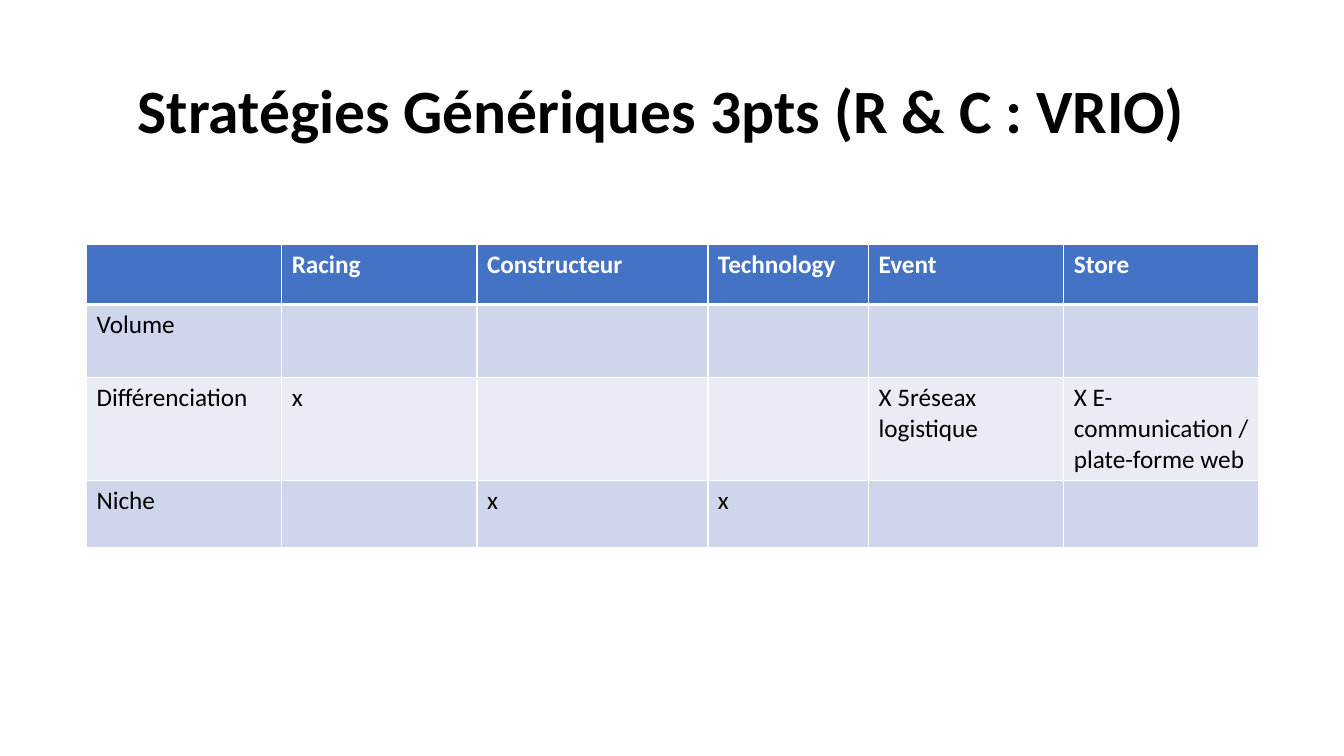
import pptx
import pptx.util
import pptx.dml.color
import pptx.enum.text
import pptx.oxml
import pptx.oxml.ns

COLORS = {
    "text": "000000",
    "header_text": "FFFFFF",
    "border": "FFFFFF",
    "header": "4472C4",
    "band_dark": "CFD5EA",
    "band_light": "E9EBF5",
}
TITLE = "Stratégies Génériques 3pts (R & C : VRIO)"
STRATEGIES = [
    ["", "Racing", "Constructeur", "Technology", "Event", "Store"],
    ["Volume", "", "", "", "", ""],
    ["Différenciation", "x", "", "", "X 5réseax logistique",
     "X E-communication / plate-forme web"],
    ["Niche", "", "x", "x", "", ""],
]
COLUMN_WIDTHS = [4.92, 4.92, 5.82, 4.05, 4.92, 4.92]
ROW_HEIGHTS = [1.52, 1.85, 1.7, 1.7]


def color(name):
    return pptx.dml.color.RGBColor.from_string(COLORS[name])


class SlideBuilder:
    font = "Calibri"

    def __init__(self, page):
        self.page = page

    def add_span(self, para, text, size, color_name, bold):
        span = para.add_run()
        span.text = text
        span.font.name = self.font
        span.font.size = pptx.util.Pt(size)
        span.font.bold = bold
        span.font.color.rgb = color(color_name)

    def add_title(self, text, left, top, width, height):
        box = self.page.shapes.title
        box.left, box.top = pptx.util.Cm(left), pptx.util.Cm(top)
        box.width, box.height = pptx.util.Cm(width), pptx.util.Cm(height)
        box.text_frame.vertical_anchor = pptx.enum.text.MSO_ANCHOR.MIDDLE
        para = box.text_frame.paragraphs[0]
        para.alignment = pptx.enum.text.PP_ALIGN.CENTER
        self.add_span(para, text, 44, "text", True)

    def add_border(self, cell, side, width):
        line = pptx.oxml.parse_xml(
            f'<a:ln{side} {pptx.oxml.ns.nsdecls("a")} w="{pptx.util.Pt(width)}">'
            f'<a:solidFill><a:srgbClr val="{COLORS["border"]}"/></a:solidFill>'
            f'</a:ln{side}>')
        cell._tc.get_or_add_tcPr().append(line)

    def fill_cell(self, cell, text, row_index):
        header = row_index == 0
        for side in "LRTB":
            thick = (header and side == "B") or (row_index == 1 and side == "T")
            self.add_border(cell, side, 3 if thick else 1)
        band = "band_dark" if row_index % 2 else "band_light"
        cell.fill.solid()
        cell.fill.fore_color.rgb = color("header" if header else band)
        if text:
            self.add_span(cell.text_frame.paragraphs[0], text, 18,
                          "header_text" if header else "text", header)

    def add_table(self, rows, left, top, widths, heights):
        frame = self.page.shapes.add_table(
            len(rows), len(widths), pptx.util.Cm(left), pptx.util.Cm(top),
            pptx.util.Cm(sum(widths)), pptx.util.Cm(sum(heights)))
        table = frame.table
        for column, width in zip(table.columns, widths):
            column.width = pptx.util.Cm(width)
        for row_index, (row, height) in enumerate(zip(table.rows, heights)):
            row.height = pptx.util.Cm(height)
            for cell, text in zip(row.cells, rows[row_index]):
                self.fill_cell(cell, text, row_index)


def main():
    deck = pptx.Presentation()
    deck.slide_width = pptx.util.Cm(33.87)
    deck.slide_height = pptx.util.Cm(19.05)
    page = deck.slides.add_slide(deck.slide_layouts[5])
    builder = SlideBuilder(page)
    builder.add_title(TITLE, 2.64, 1.68, 28.07, 2.13)
    builder.add_table(STRATEGIES, 2.18, 6.15, COLUMN_WIDTHS, ROW_HEIGHTS)
    deck.save("out.pptx")


if __name__ == "__main__":
    main()
